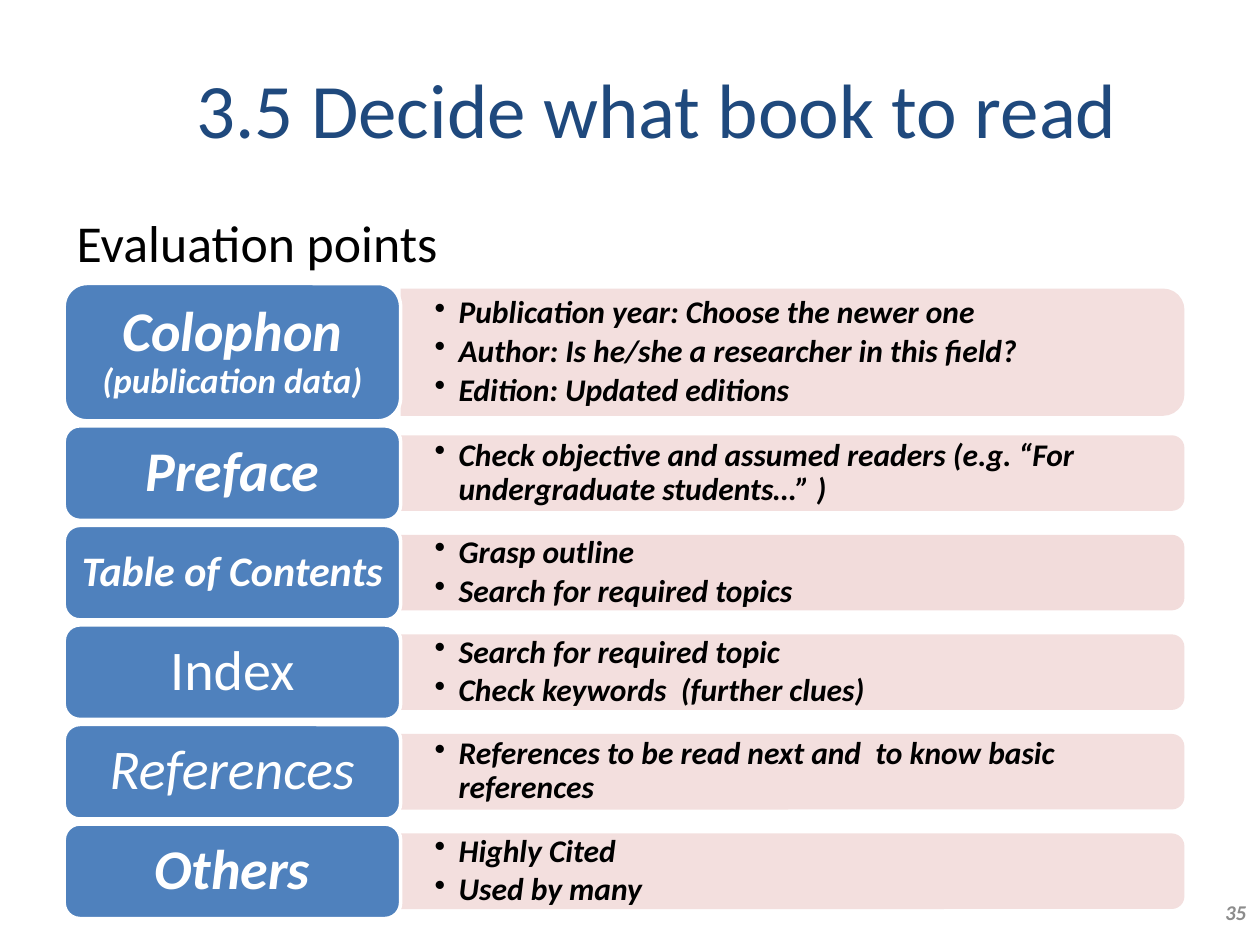
from lxml import etree
from pptx import Presentation, util as u
from pptx.dml.color import RGBColor
from pptx.enum import shapes, text
from pptx.oxml.ns import qn

NAVY = RGBColor(0x1F, 0x49, 0x7D)
BLUE = RGBColor(0x4F, 0x81, 0xBD)
PINK = RGBColor(0xF2, 0xDC, 0xDB)
GREY = RGBColor(0x8C, 0x8C, 0x8C)
WHITE = RGBColor(0xFF, 0xFF, 0xFF)
BLACK = RGBColor(0, 0, 0)
FONT = "Calibri"

LABEL_LEFT, LABEL_WIDTH = 0.51, 2.67
PANEL_LEFT, PANEL_WIDTH = LABEL_LEFT + LABEL_WIDTH, 6.22
FIRST_TOP, ROW_GAP = 2.25, 0.04
TALL, SHORT = (1.09, 1.01), (0.75, 0.6)  # label and panel heights
INDENT = 0.19

# label lines as (wording, size), bold, italic, points, heights, panel opacity
ROWS = [
    ([("Colophon", 32), ("(publication data)", 20)], True, True,
     ["Publication year: Choose the newer one",
      "Author: Is he/she a researcher in this field?",
      "Edition: Updated editions"], TALL, 90),
    ([("Preface", 32)], True, True,
     ["Check objective and assumed readers (e.g. “For undergraduate students…” )"], SHORT, 90),
    ([("Table of Contents", 24)], True, True,
     ["Grasp outline", "Search for required topics"], SHORT, 100),
    ([("Index", 32)], False, False,
     ["Search for required topic", "Check keywords  (further clues)"], SHORT, 90),
    ([("References", 32)], False, True,
     ["References to be read next and  to know basic references"], SHORT, 90),
    ([("Others", 32)], True, True, ["Highly Cited", "Used by many"], SHORT, 90),
]


def inches(*lengths):
    return [u.Inches(length) for length in lengths]


def style(paragraph, size, color, bold=False, italic=False, align=text.PP_ALIGN.LEFT):
    font = paragraph.font
    font.name, font.size, font.bold, font.italic = FONT, u.Pt(size), bold, italic
    font.color.rgb = color
    paragraph.alignment = align


def set_frame(frame, anchor, side=0.1, edge=0.05):
    frame.word_wrap = True
    frame.auto_size = text.MSO_AUTO_SIZE.NONE
    frame.vertical_anchor = anchor
    frame.margin_left = frame.margin_right = u.Inches(side)
    frame.margin_top = frame.margin_bottom = u.Inches(edge)


def fill_lines(frame, lines):
    """Write one paragraph per line and yield each for styling."""
    for index, line in enumerate(lines):
        paragraph = frame.add_paragraph() if index else frame.paragraphs[0]
        paragraph.text = line
        paragraph.line_spacing = 0.9
        yield paragraph


def add_bullet(paragraph):
    props = paragraph._p.get_or_add_pPr()
    props.set("marL", str(u.Inches(INDENT)))
    props.set("indent", str(-u.Inches(INDENT)))
    etree.SubElement(props, qn("a:buChar")).set("char", "•")
    # bullets must precede the default run properties
    defaults = props.find(qn("a:defRPr"))
    if defaults is not None:
        props.append(defaults)


def add_text(slide, box, wording, anchor, size, color, **look):
    frame = slide.shapes.add_textbox(*inches(*box)).text_frame
    set_frame(frame, anchor)
    frame.text = wording
    style(frame.paragraphs[0], size, color, **look)


def add_title(slide, wording):
    title = slide.shapes.title
    title.left, title.top, title.width, title.height = inches(1.46, 0.44, 7.85, 1.18)
    set_frame(title.text_frame, text.MSO_ANCHOR.TOP)
    title.text_frame.text = wording
    style(title.text_frame.paragraphs[0], 44, NAVY)


def add_panel(slide, middle, height, points, opacity):
    """Bar rounded on its right side, with bulleted points over it."""
    center = PANEL_LEFT + PANEL_WIDTH / 2
    bar = slide.shapes.add_shape(
        shapes.MSO_SHAPE.ROUND_2_SAME_RECTANGLE,
        *inches(center - height / 2, middle - PANEL_WIDTH / 2, height, PANEL_WIDTH))
    bar.rotation = 90
    bar.shadow.inherit = False
    bar.fill.solid()
    bar.fill.fore_color.rgb = PINK
    bar.line.fill.background()
    if opacity < 100:
        tint = bar._element.spPr.find(qn("a:solidFill"))[0]
        etree.SubElement(tint, qn("a:alpha")).set("val", str(opacity * 1000))

    frame = slide.shapes.add_textbox(
        *inches(PANEL_LEFT, middle - height / 2, PANEL_WIDTH, height)).text_frame
    set_frame(frame, text.MSO_ANCHOR.MIDDLE, side=0.27, edge=0)
    for paragraph in fill_lines(frame, points):
        paragraph.space_after = u.Pt(2.7)
        style(paragraph, 18, BLACK, bold=True, italic=True)
        add_bullet(paragraph)


def add_label(slide, top, height, lines, bold, italic):
    label = slide.shapes.add_shape(shapes.MSO_SHAPE.ROUNDED_RECTANGLE,
                                   *inches(LABEL_LEFT, top, LABEL_WIDTH, height))
    label.shadow.inherit = False
    label.fill.solid()
    label.fill.fore_color.rgb = BLUE
    label.line.color.rgb = WHITE
    label.line.width = u.Pt(2)
    set_frame(label.text_frame, text.MSO_ANCHOR.MIDDLE, side=0.05)
    paragraphs = fill_lines(label.text_frame, [wording for wording, _ in lines])
    for paragraph, (_, size) in zip(paragraphs, lines):
        style(paragraph, size, WHITE, bold, italic, text.PP_ALIGN.CENTER)


def main():
    deck = Presentation()
    deck.slide_width, deck.slide_height = inches(10, 7.5)
    slide = deck.slides.add_slide(deck.slide_layouts[5])
    add_title(slide, "3.5 Decide what book to read")
    add_text(slide, (0.51, 1.62, 4.69, 0.59), "Evaluation points",
             text.MSO_ANCHOR.TOP, 29.6, BLACK)
    add_text(slide, (9.35, 6.99, 0.64, 0.5), "35", text.MSO_ANCHOR.MIDDLE, 12, GREY,
             bold=True, italic=True, align=text.PP_ALIGN.RIGHT)

    top = FIRST_TOP
    for lines, bold, italic, points, (label_height, panel_height), opacity in ROWS:
        add_panel(slide, top + label_height / 2, panel_height, points, opacity)
        add_label(slide, top, label_height, lines, bold, italic)
        top += label_height + ROW_GAP
    deck.save("out.pptx")


if __name__ == "__main__":
    main()
